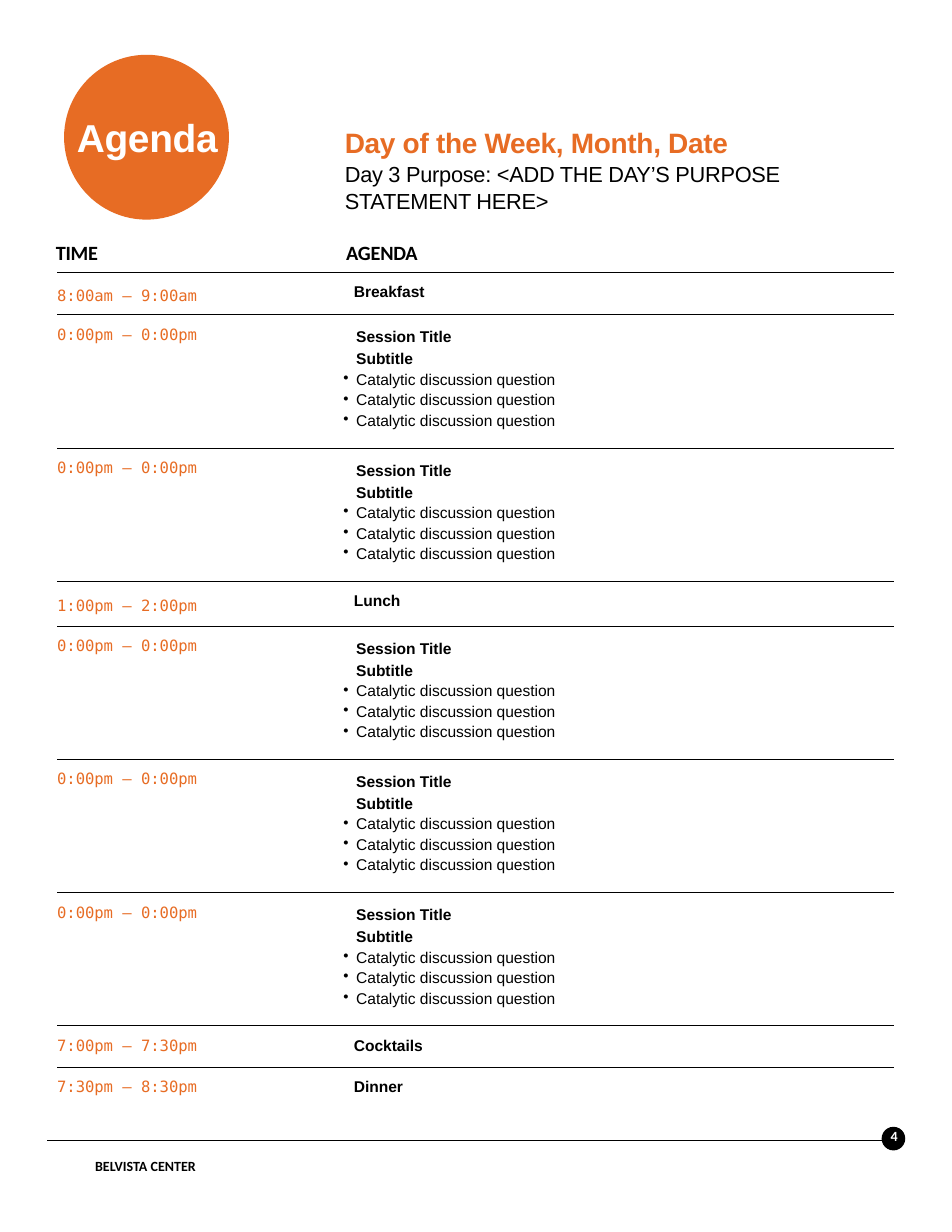
"""Build the one-page agenda for day three of a meeting."""
import pptx
import pptx.dml.color
import pptx.enum.shapes
import pptx.enum.text
import pptx.oxml
import pptx.oxml.ns
import pptx.util

Pt = pptx.util.Pt
qn = pptx.oxml.ns.qn
COLOURS = {"orange": "E76C24", "black": "000000", "white": "FFFFFF"}
STYLES = {
    "badge": {"name": "Arial", "size": Pt(25), "bold": True},
    "date": {"name": "Arial", "size": Pt(18), "bold": True},
    "purpose": {"name": "Arial", "size": Pt(14), "bold": False},
    "heading": {"name": "Calibri", "size": Pt(13), "bold": True},
    "footer": {"name": "Calibri", "size": Pt(9), "bold": True},
    "time": {"name": "DejaVu Sans Mono", "size": Pt(10), "bold": False},
    "session": {"name": "Arial", "size": Pt(10), "bold": True},
    "question": {"name": "Arial", "size": Pt(10), "bold": False},
}


def write(paragraph, text, style, colour, tracking=0):
    run = paragraph.add_run()
    run.text = text
    for name, value in STYLES[style].items():
        setattr(run.font, name, value)
    run.font.color.rgb = pptx.dml.color.RGBColor.from_string(COLOURS[colour])
    if tracking:
        run.font._element.set("spc", str(tracking))


def set_margins(holder, left, top, right, bottom):
    margins = {"left": left, "top": top, "right": right, "bottom": bottom}
    for side, value in margins.items():
        setattr(holder, f"margin_{side}", Pt(value))


deck = pptx.Presentation()
deck.slide_width, deck.slide_height = Pt(612), Pt(792)
page = deck.slides.add_slide(deck.slide_layouts[6])

footer_rule = page.shapes.add_connector(
    pptx.enum.shapes.MSO_CONNECTOR.STRAIGHT, Pt(30.5), Pt(733), Pt(568), Pt(733))
footer_rule.line.width = Pt(0.25)
footer_rule.line.color.rgb = pptx.dml.color.RGBColor.from_string(COLOURS["black"])
footer_rule._element.spPr.append(pptx.oxml.parse_xml(
    '<a:effectLst xmlns:a="http://schemas.openxmlformats.org/drawingml/2006/main"/>'))

for left, top, diameter, colour in [(41.2, 35.2, 106, "orange"), (566.8, 724.4, 15.2, "black")]:
    disc = page.shapes.add_shape(
        pptx.enum.shapes.MSO_SHAPE.OVAL, Pt(left), Pt(top), Pt(diameter), Pt(diameter))
    disc.shadow.inherit = False
    disc.fill.solid()
    disc.fill.fore_color.rgb = pptx.dml.color.RGBColor.from_string(COLOURS[colour])
    disc.line.fill.background()

labels = [
    ((46.1, 72, 96.5, 31.7), (0.7, 1), "CENTER", [("Agenda", "badge", "white", -20)]),
    ((60.5, 743.8, 83.5, 13.7), (0.7, 0), "LEFT", [("BELVISTA CENTER", "footer", "black", 0)]),
    ((569.5, 725, 12.2, 11.5), (3, 0), "LEFT", [("4", "footer", "white", 0)]),
    ((35.3, 153.4, 33.1, 17.3), (0.7, 1), "LEFT", [("TIME", "heading", "black", -20)]),
    ((221.8, 153.4, 49, 17.3), (0.7, 1), "LEFT", [("AGENDA", "heading", "black", -10)]),
    ((221, 80, 331.2, 57.6), (0.7, 1), "LEFT", [
        ("Day of the Week, Month, Date", "date", "orange", -20),
        ("Day 3 Purpose: <ADD THE DAY’S PURPOSE STATEMENT HERE>", "purpose", "black", -20)]),
]
for place, (indent, inset), alignment, lines in labels:
    frame = page.shapes.add_textbox(*map(Pt, place)).text_frame
    frame.word_wrap = True
    set_margins(frame, indent, inset, 0, 0)
    for index, line in enumerate(lines):
        paragraph = frame.add_paragraph() if index else frame.paragraphs[0]
        paragraph.alignment = getattr(pptx.enum.text.PP_ALIGN, alignment)
        if index:
            paragraph.space_before = Pt(1)
        write(paragraph, *line)

session = ["Session Title", "Subtitle"] + ["Catalytic discussion question"] * 3
open_slot = ("0:00pm – 0:00pm", session, 85.4, "TOP", 3.6)
schedule = [
    ("8:00am – 9:00am", ["Breakfast"], 27.4, "MIDDLE", 3.6),
    *[open_slot] * 2,
    ("1:00pm – 2:00pm", ["Lunch"], 28.9, "MIDDLE", 3.6),
    *[open_slot] * 3,
    ("7:00pm – 7:30pm", ["Cocktails"], 26.3, "TOP", 7.2),
    ("7:30pm – 8:30pm", ["Dinner"], 25.2, "TOP", 7.2),
]
agenda = page.shapes.add_table(
    len(schedule), 2, Pt(36.7), Pt(175), Pt(537.8), Pt(sum(slot[2] for slot in schedule))).table
agenda.first_row = agenda.horz_banding = False
agenda._tbl.tblPr.find(qn("a:tableStyleId")).text = "{2D5ABB26-0587-4C30-8999-92F81FD0307C}"
for column, width in zip(agenda.columns, (183.6, 354.2)):
    column.width = Pt(width)

for row, (time, items, height, anchor, time_bottom) in enumerate(schedule):
    agenda.rows[row].height = Pt(height)
    time_cell, item_cell = agenda.cell(row, 0), agenda.cell(row, 1)
    edges = ["lnT"] if row == len(schedule) - 1 else ["lnT", "lnB"]
    for cell in (time_cell, item_cell):
        for edge in edges:
            cell._tc.get_or_add_tcPr().append(pptx.oxml.parse_xml(
                f'<a:{edge} xmlns:a="http://schemas.openxmlformats.org/drawingml/2006/main" w="6350">'
                f'<a:solidFill><a:srgbClr val="{COLOURS["black"]}"/></a:solidFill></a:{edge}>'))
        cell.fill.background()
    time_cell.vertical_anchor = getattr(pptx.enum.text.MSO_ANCHOR, anchor)
    set_margins(time_cell, 0, 7.2, 0, time_bottom)
    write(time_cell.text_frame.paragraphs[0], time, "time", "orange")

    is_session = len(items) > 1
    side = 0 if is_session else 7.2
    set_margins(item_cell, side, 7.2, side, 7.2)
    for index, item in enumerate(items):
        frame = item_cell.text_frame
        paragraph = frame.add_paragraph() if index else frame.paragraphs[0]
        is_question = index > 1
        if is_session:
            properties = paragraph._p.get_or_add_pPr()
            properties.set("marL", str(Pt(8.7)))
            properties.set("indent", str(Pt(-8.2 if is_question else 0)))
        if is_question:
            bullet = properties.makeelement(qn("a:buChar"), {"char": "•"})
            properties.append(bullet)
        elif is_session:
            paragraph.line_spacing = 1.17
        if index:
            paragraph.space_before = Pt(2 if is_question else 1)
        write(paragraph, item, "question" if is_question else "session", "black")

deck.save("out.pptx")
